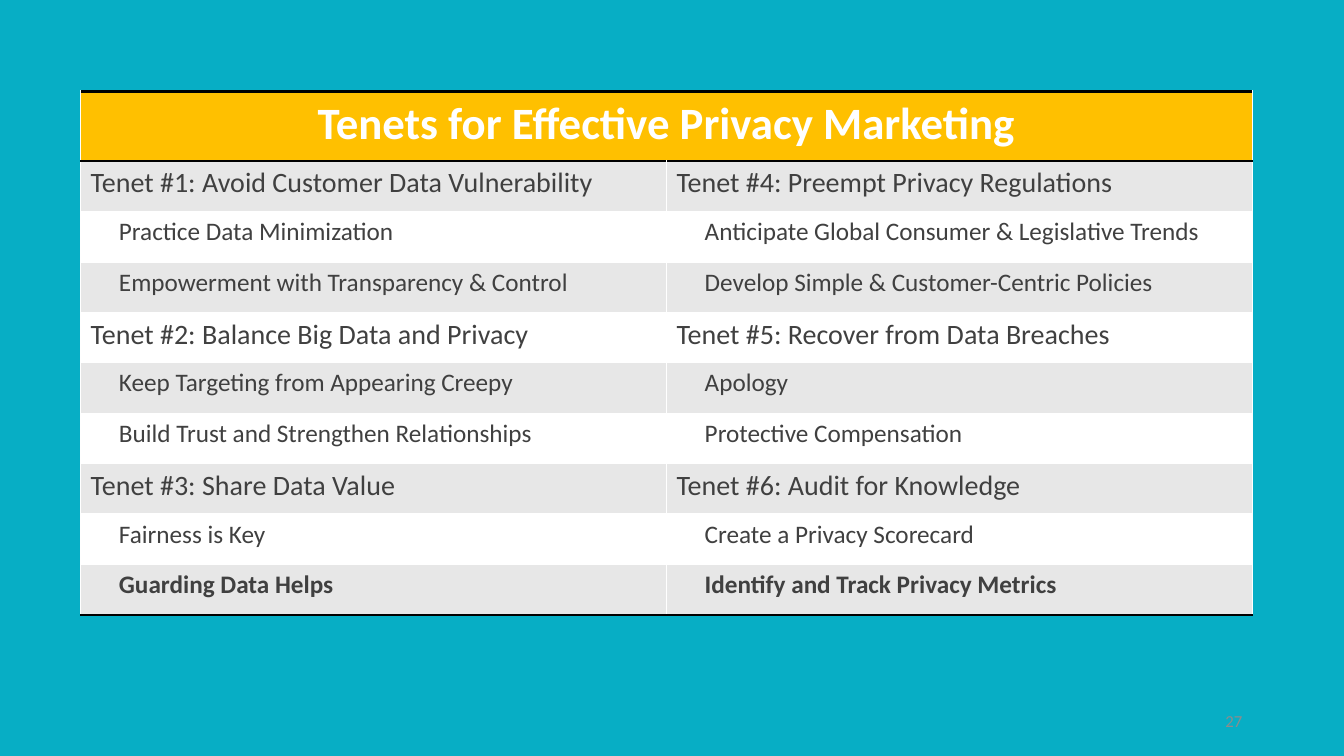
from lxml import etree
from pptx import Presentation
from pptx.dml.color import RGBColor
from pptx.enum.text import MSO_ANCHOR, PP_ALIGN
from pptx.oxml.ns import qn
from pptx.util import Inches, Pt

HEADING = "Tenets for Effective Privacy Marketing"
TENET_COLUMNS = [
    [
        ("Tenet #1: Avoid Customer Data Vulnerability",
         ["Practice Data Minimization", "Empowerment with Transparency & Control"]),
        ("Tenet #2: Balance Big Data and Privacy",
         ["Keep Targeting from Appearing Creepy", "Build Trust and Strengthen Relationships"]),
        ("Tenet #3: Share Data Value",
         ["Fairness is Key", "Guarding Data Helps"]),
    ],
    [
        ("Tenet #4: Preempt Privacy Regulations",
         ["Anticipate Global Consumer & Legislative Trends",
          "Develop Simple & Customer-Centric Policies"]),
        ("Tenet #5: Recover from Data Breaches",
         ["Apology", "Protective Compensation"]),
        ("Tenet #6: Audit for Knowledge",
         ["Create a Privacy Scorecard", "Identify and Track Privacy Metrics"]),
    ],
]
PAGE_NUMBER = "27"

COLORS = {"background": "07AEC5", "header": "FFC000", "header text": "FFFFFF",
          "odd row": "E7E7E7", "even row": "FFFFFF", "text": "404040",
          "rule": "000000", "page number": "8C8C8C"}
FONT = "Calibri"
BLANK_LAYOUT = 6
SLIDE_WIDTH, SLIDE_HEIGHT = 13.33, 7.5
TABLE_LEFT, TABLE_TOP = 0.8, 0.91
COLUMN_WIDTH, HEADER_HEIGHT, ROW_HEIGHT = 5.81, 0.69, 0.5
CELL_MARGIN, POINT_INDENT = 0.1, 0.28


def color(name):
    return RGBColor.from_string(COLORS[name])


def set_text(frame, text, size, color_name, bold=False, align=PP_ALIGN.LEFT):
    paragraph = frame.paragraphs[0]
    paragraph.text = text
    paragraph.alignment = align
    font = paragraph.font
    font.name, font.size, font.bold = FONT, Pt(size), bold
    font.color.rgb = color(color_name)


def fill_cell(cell, color_name):
    cell.fill.solid()
    cell.fill.fore_color.rgb = color(color_name)


def add_rules(cell, *sides):
    """Draw 2 pt rules on the given sides, top before bottom."""
    properties = cell._tc.get_or_add_tcPr()
    for position, side in enumerate(sides):
        line = etree.Element(qn(f"a:{side}"), w=str(Pt(2)))
        fill = etree.SubElement(line, qn("a:solidFill"))
        etree.SubElement(fill, qn("a:srgbClr"), val=COLORS["rule"])
        properties.insert(position, line)


def add_tenet_table(slide):
    row_count = 1 + sum(1 + len(points) for _, points in TENET_COLUMNS[0])
    column_count = len(TENET_COLUMNS)
    table = slide.shapes.add_table(
        row_count, column_count, Inches(TABLE_LEFT), Inches(TABLE_TOP),
        Inches(COLUMN_WIDTH * column_count),
        Inches(HEADER_HEIGHT + ROW_HEIGHT * (row_count - 1))).table
    for row in table.rows:
        row.height = Inches(ROW_HEIGHT)
    table.rows[0].height = Inches(HEADER_HEIGHT)

    header = table.cell(0, 0)
    header.merge(table.cell(0, column_count - 1))
    set_text(header.text_frame, HEADING, 32, "header text", True, PP_ALIGN.CENTER)

    for column, tenets in enumerate(TENET_COLUMNS):
        table.columns[column].width = Inches(COLUMN_WIDTH)
        fill_cell(table.cell(0, column), "header")
        add_rules(table.cell(0, column), "lnT", "lnB")
        lines = []
        for tenet, points in tenets:
            lines.append((tenet, 20, 0))
            lines += [(point, 18, POINT_INDENT) for point in points]
        for row, (text, size, indent) in enumerate(lines, start=1):
            cell = table.cell(row, column)
            last = row == row_count - 1
            cell.margin_left = Inches(CELL_MARGIN + indent)
            set_text(cell.text_frame, text, size, "text", bold=last)
            fill_cell(cell, "odd row" if row % 2 else "even row")
            if last:
                add_rules(cell, "lnB")


def add_page_number(slide):
    box = slide.shapes.add_textbox(Inches(9.42), Inches(6.95), Inches(3), Inches(0.4))
    frame = box.text_frame
    frame.word_wrap = True
    frame.vertical_anchor = MSO_ANCHOR.MIDDLE
    set_text(frame, PAGE_NUMBER, 12, "page number", align=PP_ALIGN.RIGHT)


def main():
    presentation = Presentation()
    presentation.slide_width = Inches(SLIDE_WIDTH)
    presentation.slide_height = Inches(SLIDE_HEIGHT)
    slide = presentation.slides.add_slide(presentation.slide_layouts[BLANK_LAYOUT])
    slide.background.fill.solid()
    slide.background.fill.fore_color.rgb = color("background")
    add_tenet_table(slide)
    add_page_number(slide)
    presentation.save("out.pptx")


if __name__ == "__main__":
    main()
